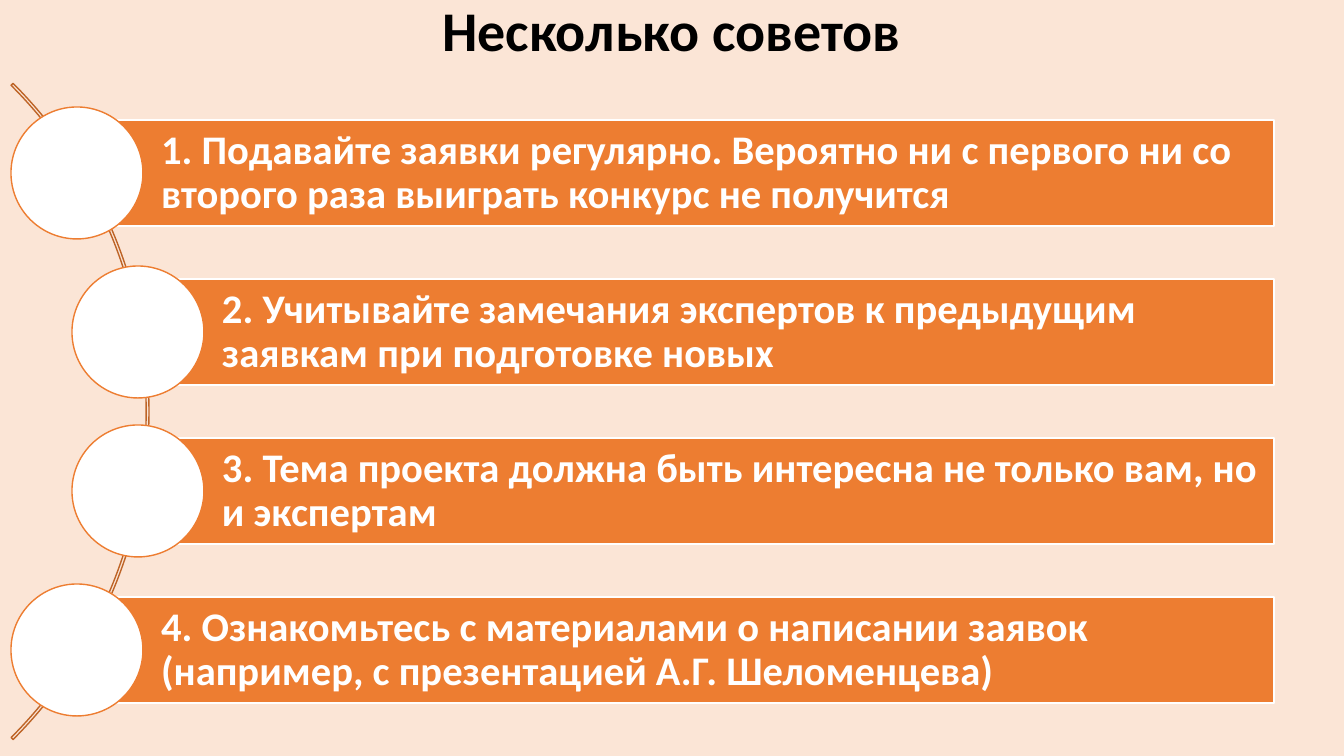
import dataclasses

import pptx
import pptx.dml.color
import pptx.enum.shapes
import pptx.enum.text
import pptx.util

SLIDE_WIDTH, SLIDE_HEIGHT = 1344, 756
EMU_PER_PX = 12192000 / SLIDE_WIDTH
SHAPES = pptx.enum.shapes.MSO_SHAPE

HEADING = "Несколько советов"
TIPS = [
    "1. Подавайте заявки регулярно. Вероятно ни с первого ни со второго раза выиграть конкурс не получится",
    "2. Учитывайте замечания экспертов к предыдущим заявкам при подготовке новых",
    "3. Тема проекта должна быть интересна не только вам, но и экспертам",
    "4. Ознакомьтесь с материалами о написании заявок (например, с презентацией А.Г. Шеломенцева)",
]


@dataclasses.dataclass(frozen=True)
class Theme:
    background: str = "FBE5D6"
    accent: str = "ED7D31"
    arc: str = "BE6427"
    light: str = "FFFFFF"
    dark: str = "000000"
    font: str = "Calibri"
    title_size: int = 40
    tip_size: int = 29
    line_width: int = 1
    line_spacing: float = 0.9


THEME = Theme()


def px(length):
    return pptx.util.Emu(round(length * EMU_PER_PX))


def rgb(color):
    return pptx.dml.color.RGBColor.from_string(color)


def add_shape(slide, kind, box, line, fill=None):
    shape = slide.shapes.add_shape(kind, *map(px, box))
    shape.shadow.inherit = False
    if fill:
        shape.fill.solid()
        shape.fill.fore_color.rgb = rgb(fill)
    else:
        shape.fill.background()
    shape.line.color.rgb = rgb(line)
    shape.line.width = pptx.util.Pt(THEME.line_width)
    return shape


def write_text(shape, text, size, color, alignment):
    frame = shape.text_frame
    frame.word_wrap = True
    frame.auto_size = pptx.enum.text.MSO_AUTO_SIZE.NONE
    frame.vertical_anchor = pptx.enum.text.MSO_ANCHOR.MIDDLE
    paragraph = frame.paragraphs[0]
    paragraph.alignment = alignment
    paragraph.line_spacing = THEME.line_spacing
    run = paragraph.add_run()
    run.text = text
    run.font.name = THEME.font
    run.font.size = pptx.util.Pt(size)
    run.font.bold = True
    run.font.color.rgb = rgb(color)


def place_title(slide, box):
    title = slide.shapes.title
    title.left, title.top, title.width, title.height = map(px, box)
    write_text(title, HEADING, THEME.title_size, THEME.dark,
               pptx.enum.text.PP_ALIGN.CENTER)


def add_tip(slide, box, text):
    left, top, width, height = box
    # Bar with its text
    bar = add_shape(slide, SHAPES.RECTANGLE, box, THEME.light, THEME.accent)
    frame = bar.text_frame
    frame.margin_left = px(84)
    frame.margin_top = frame.margin_right = frame.margin_bottom = px(8)
    write_text(bar, text, THEME.tip_size, THEME.light, pptx.enum.text.PP_ALIGN.LEFT)
    # Circle centred on the bar's left edge
    diameter = 132
    circle_box = (left - diameter / 2, top + (height - diameter) / 2, diameter, diameter)
    add_shape(slide, SHAPES.OVAL, circle_box, THEME.accent, THEME.light)


def add_tip_list(slide, box):
    left, top, width, height = box
    # Thin arc running behind the circles
    diameter = 928
    arc_box = (left - 790, top + (height - diameter) / 2, diameter, diameter)
    arc = add_shape(slide, SHAPES.BLOCK_ARC, arc_box, THEME.arc)
    for index, value in enumerate((189, 27, 0.003)):
        arc.adjustments[index] = value
    # Evenly spaced bars, the middle ones indented to follow the arc
    bar_height, indent = 106, 61
    pitch = (height - bar_height) / (len(TIPS) - 1)
    for row, text in enumerate(TIPS):
        shift = indent if 0 < row < len(TIPS) - 1 else 0
        add_tip(slide, (left + 66 + shift, top + row * pitch,
                        width - 66 - shift, bar_height), text)


def main():
    presentation = pptx.Presentation()
    presentation.slide_width = px(SLIDE_WIDTH)
    presentation.slide_height = px(SLIDE_HEIGHT)
    slide = presentation.slides.add_slide(presentation.slide_layouts[5])
    slide.background.fill.solid()
    slide.background.fill.fore_color.rgb = rgb(THEME.background)
    add_tip_list(slide, (11, 120, 1263, 583))
    place_title(slide, (11, 0, 1321, 67))
    presentation.save("out.pptx")


if __name__ == "__main__":
    main()
